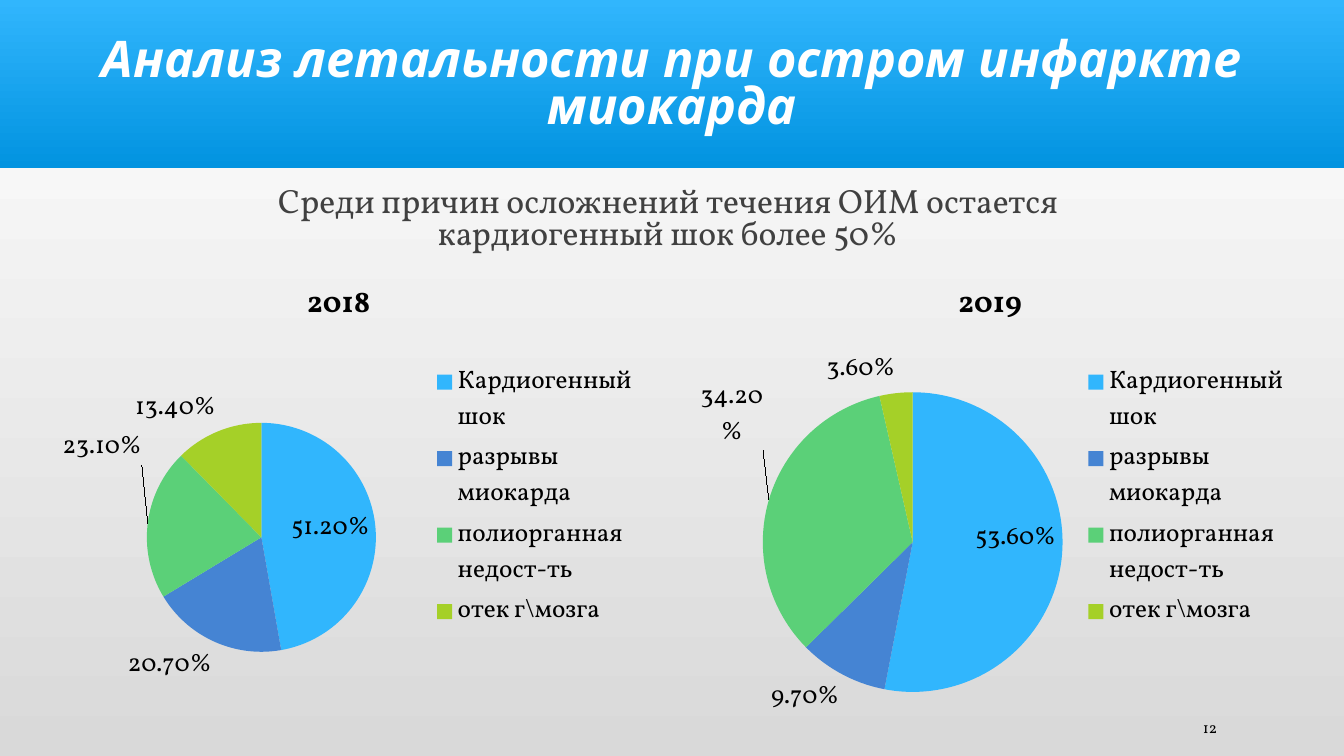
import pptx
import pptx.chart.data
import pptx.dml.color
import pptx.enum.chart
import pptx.enum.shapes
import pptx.enum.text
import pptx.oxml
import pptx.util
from pptx.util import Inches

# Content
HEADING = "Анализ летальности при остром инфаркте миокарда"
FINDING = "Среди причин осложнений течения ОИМ остается кардиогенный шок более 50%"
PAGE = "12"
CAUSES = ["Кардиогенный шок", "разрывы миокарда", "полиорганная недост-ть", "отек г\\мозга"]
CAUSE_COLORS = ["31B6FD", "4584D3", "5BD078", "A5D028"]
MOVED_CAUSE = 2
# Pie area is (x, y, width, height) as shares of the chart
YEARS = [
    {"year": "2018", "shares": (0.512, 0.207, 0.231, 0.134),
     "pie": (0.19, 0.34, 0.37, 0.49), "label_shift": -0.12},
    {"year": "2019", "shares": (0.536, 0.097, 0.342, 0.036),
     "pie": (0.13, 0.28, 0.49, 0.63), "label_shift": -0.1},
]
BODY_FONT, HEADING_FONT = "Vollkorn", "Open Sans"
ALIGN = pptx.enum.text.PP_ALIGN
LABEL = pptx.enum.chart.XL_LABEL_POSITION
CHART_LEFT, CHART_STEP = 0.29, 6.46


def rgb(value):
    return pptx.dml.color.RGBColor.from_string(value)


def style(font, size, color, name=BODY_FONT, bold=False, italic=False):
    font.size, font.name = pptx.util.Pt(size), name
    font.bold, font.italic = bold, italic
    font.color.rgb = rgb(color)


def gradient(fill, start, end, angle):
    fill.gradient()
    fill.gradient_angle = angle
    for stop, color, position in zip(fill.gradient_stops, (start, end), (0, 1)):
        stop.color.rgb = rgb(color)
        stop.position = position


def add_text(slide, box, text, size, color, align, spacing=1.0, **look):
    frame = slide.shapes.add_textbox(*map(Inches, box)).text_frame
    frame.word_wrap = True
    frame.vertical_anchor = pptx.enum.text.MSO_ANCHOR.MIDDLE
    paragraph = frame.paragraphs[0]
    paragraph.alignment, paragraph.line_spacing = align, spacing
    run = paragraph.add_run()
    run.text = text
    style(run.font, size, color, **look)


def manual_layout(**parts):
    values = "".join(f'<c:{tag} val="{value}"/>' for tag, value in parts.items())
    return pptx.oxml.parse_xml(
        '<c:layout xmlns:c="http://schemas.openxmlformats.org/drawingml/2006/chart">'
        f"<c:manualLayout>{values}</c:manualLayout></c:layout>")


def add_pie(slide, left, entry):
    data = pptx.chart.data.CategoryChartData(number_format="0.00%")
    data.categories = CAUSES
    data.add_series(entry["year"], entry["shares"])
    chart = slide.shapes.add_chart(
        pptx.enum.chart.XL_CHART_TYPE.PIE, Inches(left), Inches(2.57),
        Inches(6.14), Inches(4.72), data).chart
    style(chart.font, 18, "000000")

    # Title and legend
    chart.has_title = True
    title_run = chart.chart_title.text_frame.paragraphs[0].add_run()
    title_run.text = entry["year"]
    style(title_run.font, 21.6, "000000", bold=True)
    chart.has_legend = True
    chart.legend.position = pptx.enum.chart.XL_LEGEND_POSITION.RIGHT
    chart.legend.include_in_layout = False
    style(chart.legend.font, 18, "000000")

    # Pie area
    plot = chart.plots[0]
    plot.vary_by_categories = True
    plot_area = chart.element.chart.plotArea
    for old in plot_area.xpath("./c:layout"):
        plot_area.remove(old)
    x, y, w, h = entry["pie"]
    plot_area.insert(0, manual_layout(layoutTarget="inner", xMode="edge", yMode="edge",
                                      x=x, y=y, w=w, h=h))

    # Slices and value labels
    series = plot.series[0]
    labels = series.data_labels
    labels.show_value, labels.show_percentage = True, False
    labels.number_format, labels.number_format_is_linked = "0.00%", False
    labels.show_legend_key = False
    style(labels.font, 18, "000000")
    for index, color in enumerate(CAUSE_COLORS):
        fill = series.points[index].format.fill
        fill.solid()
        fill.fore_color.rgb = rgb(color)
        series.points[index].data_label.position = (
            LABEL.INSIDE_END if index == 0 else LABEL.OUTSIDE_END)
    moved = labels._element.xpath(f"./c:dLbl[c:idx/@val='{MOVED_CAUSE}']")[0]
    moved.insert(1, manual_layout(x=0, y=entry["label_shift"]))
    for leader in labels._element.xpath("./c:showLeaderLines"):
        leader.set("val", "1")


def main():
    deck = pptx.Presentation()
    deck.slide_width, deck.slide_height = Inches(13.33), Inches(7.5)
    slide = deck.slides.add_slide(deck.slide_layouts[6])
    gradient(slide.background.fill, "D9D9D9", "FFFFFF", 90)

    # Heading band
    band = slide.shapes.add_shape(pptx.enum.shapes.MSO_SHAPE.RECTANGLE,
                                  0, 0, Inches(13.33), Inches(1.67))
    band.shadow.inherit = False
    gradient(band.fill, "31B6FD", "0293E0", 270)
    band.line.fill.background()
    add_text(slide, (0, 0, 13.33, 1.73), HEADING, 36, "FFFFFF", ALIGN.CENTER, 0.78,
             name=HEADING_FONT, bold=True, italic=True)
    add_text(slide, (2.02, 1.78, 9.21, 0.81), FINDING, 24, "404040", ALIGN.CENTER, 0.78)

    # One pie per year
    for column, entry in enumerate(YEARS):
        add_pie(slide, CHART_LEFT + column * CHART_STEP, entry)

    add_text(slide, (11.25, 7.09, 0.92, 0.26), PAGE, 11, "000000", ALIGN.RIGHT)
    deck.save("out.pptx")


if __name__ == "__main__":
    main()
